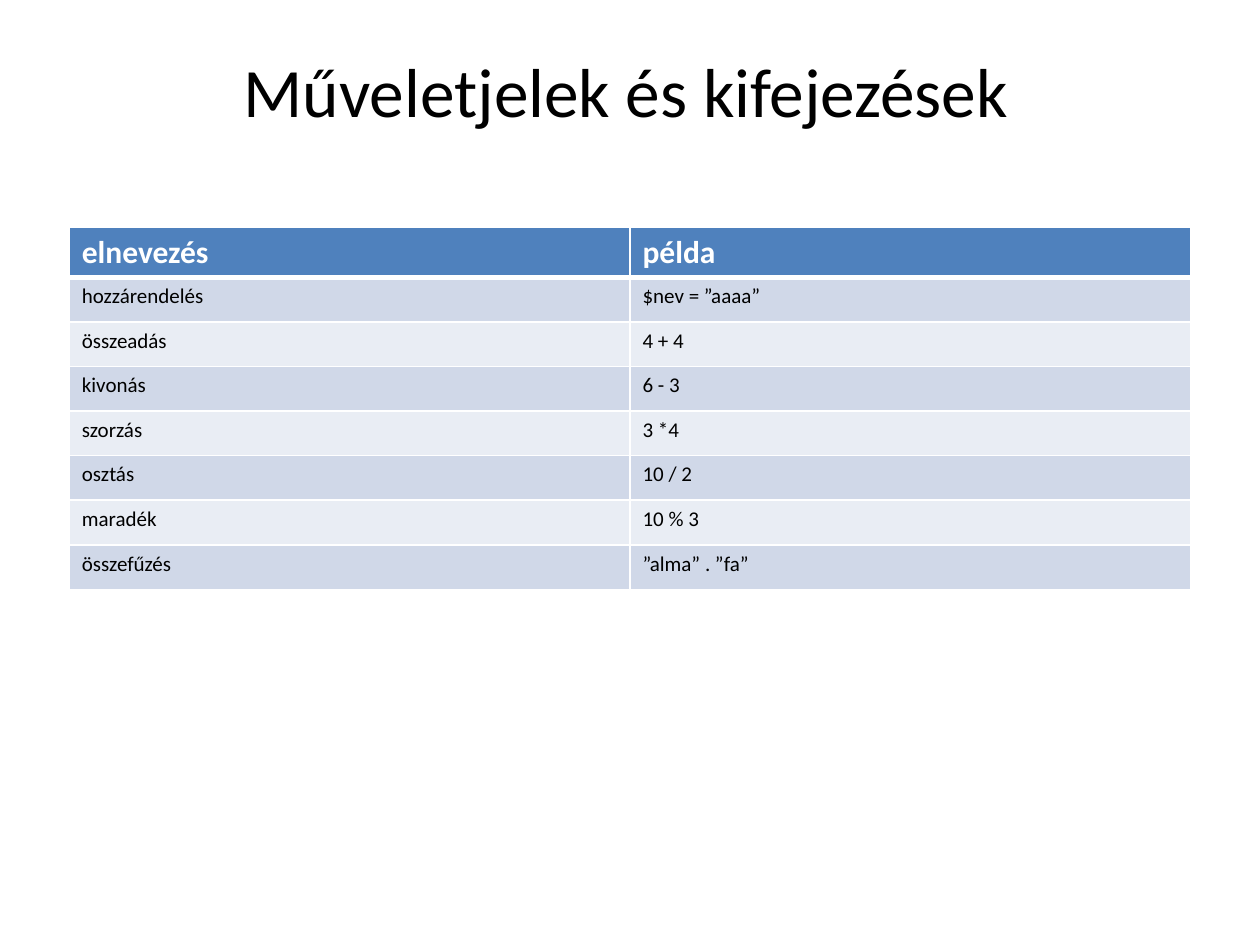
"""Build a slide with a table of operators and example expressions."""
from dataclasses import dataclass

from lxml.etree import SubElement
from pptx import Presentation
from pptx.dml.color import RGBColor
from pptx.enum.text import MSO_ANCHOR, PP_ALIGN
from pptx.oxml.ns import qn
from pptx.util import Inches, Pt


@dataclass(frozen=True)
class Theme:
    font: str = "Calibri"
    text: str = "000000"
    light: str = "FFFFFF"
    header: str = "4F81BD"
    bands: tuple = ("D0D8E8", "E9EDF4")
    title_size: float = 39.6
    header_size: float = 18
    body_size: float = 12


THEME = Theme()


def style_text(paragraph, size, color, bold=False):
    font = paragraph.font
    font.name, font.size, font.bold = THEME.font, Pt(size), bold
    font.color.rgb = RGBColor.from_string(color)


def add_borders(cell, widths):
    properties = cell._tc.get_or_add_tcPr()
    for side, width in widths.items():
        line = SubElement(properties, qn(f"a:ln{side}"), w=str(Pt(width)))
        fill = SubElement(line, qn("a:solidFill"))
        SubElement(fill, qn("a:srgbClr"), val=THEME.light)


OPERATIONS = [
    ("elnevezés", "példa"),
    ("hozzárendelés", "$nev = ”aaaa”"),
    ("összeadás", "4 + 4"),
    ("kivonás", "6 - 3"),
    ("szorzás", "3 *4"),
    ("osztás", "10 / 2"),
    ("maradék", "10 % 3"),
    ("összefűzés", "”alma” . ”fa”"),
]

presentation = Presentation()
presentation.slide_width, presentation.slide_height = Inches(10), Inches(7.5)
slide = presentation.slides.add_slide(presentation.slide_layouts[6])

title = slide.shapes.add_textbox(Inches(0.47), Inches(0.39), Inches(9), Inches(0.64)).text_frame
title.word_wrap = True
title.vertical_anchor = MSO_ANCHOR.MIDDLE
title.margin_left = title.margin_right = title.margin_top = title.margin_bottom = 0
heading = title.paragraphs[0]
heading.text = "Műveletjelek és kifejezések"
heading.alignment = PP_ALIGN.CENTER
style_text(heading, THEME.title_size, THEME.text)

table_height, header_height = Inches(2.88), Inches(0.4)
operators = slide.shapes.add_table(
    len(OPERATIONS), 2, Inches(0.55), Inches(1.8), Inches(8.9), table_height
).table
body_height = (table_height - header_height) // (len(OPERATIONS) - 1)

for row, entries in enumerate(OPERATIONS):
    is_header = row == 0
    operators.rows[row].height = header_height if is_header else body_height
    background = THEME.header if is_header else THEME.bands[(row - 1) % 2]
    size = THEME.header_size if is_header else THEME.body_size
    color = THEME.light if is_header else THEME.text
    widths = {"L": 1, "R": 1, "T": 3 if row == 1 else 1, "B": 3 if is_header else 1}
    for column, entry in enumerate(entries):
        cell = operators.cell(row, column)
        cell.text = entry
        style_text(cell.text_frame.paragraphs[0], size, color, is_header)
        add_borders(cell, widths)
        cell.fill.solid()
        cell.fill.fore_color.rgb = RGBColor.from_string(background)

presentation.save("out.pptx")
